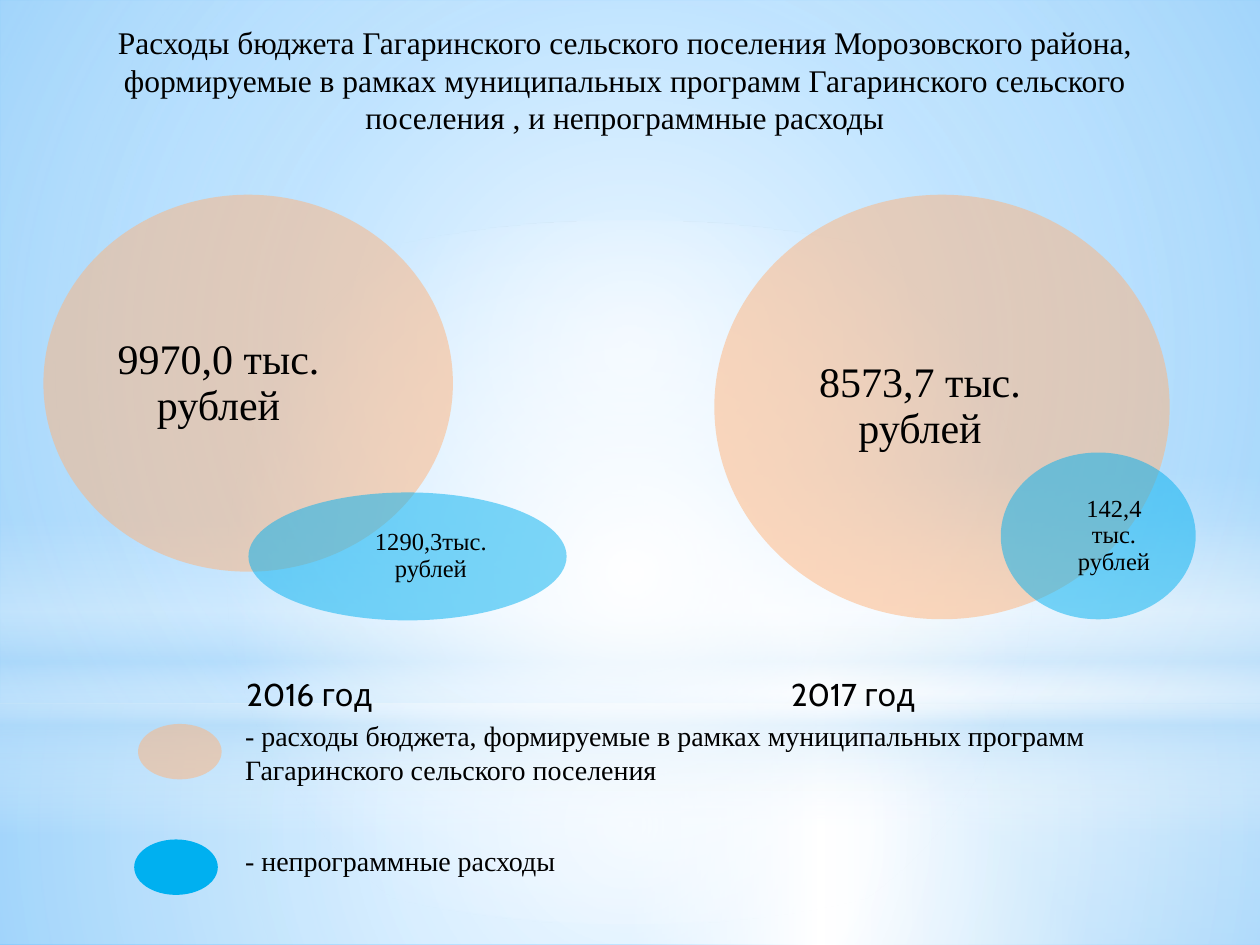
from lxml.etree import SubElement
from pptx import Presentation
from pptx.dml.color import RGBColor
from pptx.enum.shapes import MSO_SHAPE
from pptx.enum.text import MSO_ANCHOR, PP_ALIGN
from pptx.oxml.ns import qn
from pptx.util import Pt

BLACK = RGBColor(0x00, 0x00, 0x00)
WHITE = RGBColor(0xFF, 0xFF, 0xFF)
PEACH = RGBColor(0xFF, 0xB3, 0x7A)
CYAN = RGBColor(0x00, 0xB0, 0xF0)
PALE_BLUE = RGBColor(0xB4, 0xDC, 0xFA)
SKY = RGBColor(0x9E, 0xD5, 0xFF)
DEEP_SKY = RGBColor(0x5B, 0xB9, 0xFF)

SERIF = "Times New Roman"
SANS = "Cabin"
CENTRE = (50, 50, 50, 50)
INSETS = (7.2, 3.6, 7.2, 3.6)

# Backdrop layers: preset, box, stops (position, colour, opacity), path, focus
BACKDROP = [
    (MSO_SHAPE.RECTANGLE, (0, 402, 720, 138),
     [(0, WHITE, 91), (37, WHITE, 76), (100, PALE_BLUE, 79)], "circle", CENTRE),
    (MSO_SHAPE.RECTANGLE, (0, 0, 720, 402),
     [(0, WHITE, 89), (48, WHITE, 62), (100, PALE_BLUE, 79)], "circle", CENTRE),
    (MSO_SHAPE.RECTANGLE, (0, 297, 720, 180),
     [(0, WHITE, 0), (29, WHITE, 30), (45, PALE_BLUE, 40), (55, WHITE, 26),
      (65, PALE_BLUE, 60), (100, WHITE, 0)], None, None),
    (MSO_SHAPE.OVAL, (0, 126, 720, 402),
     [(0, WHITE, 100), (56, WHITE, 0)], "circle", CENTRE),
]

# Amounts: oval box, colour, label box, label, size
AMOUNTS = [
    ((408.2, 111.3, 260.2, 242.6), PEACH, (432.7, 132.9, 186, 199.4),
     "8573,7 тыс. рублей", 24),
    ((571.9, 258.6, 111.4, 95.3), CYAN, (607.2, 271.6, 58.8, 69.3),
     "142,4 тыс. рублей", 14),
    ((24.8, 111.3, 234, 215.4), PEACH, (57.6, 136.8, 134.6, 164.9),
     "9970,0 тыс. рублей", 24),
    ((142, 281.4, 181.8, 73.1), CYAN, (193.7, 290.2, 105.1, 55.4),
     "1290,3тыс. рублей", 14),
]

# Legend: key box, colour, opacity, text box, text
LEGEND = [
    ((78.9, 413.7, 47.8, 31.7), PEACH, 50, (133, 407, 556, 46),
     "- расходы бюджета, формируемые в рамках муниципальных программ "
     "Гагаринского сельского поселения"),
    ((76.7, 479.7, 47.8, 31.7), CYAN, 100, (133, 478.3, 487, 26.6),
     "- непрограммные расходы"),
]

YEARS = [
    ("2016 год", (84.2, 382.3, 185, 29), PP_ALIGN.CENTER),
    ("2017 год", (445, 382.3, 235.4, 29), PP_ALIGN.LEFT),
]


def points(box):
    return [Pt(value) for value in box]


def set_opacity(color_element, percent):
    if percent < 100:
        SubElement(color_element, qn("a:alpha"), val=str(percent * 1000))


def make_gradient(properties, stops, path=None, focus=None):
    """Replace the solid fill in properties by a gradient."""
    solid = properties.find(qn("a:solidFill"))
    gradient = SubElement(properties, qn("a:gradFill"), rotWithShape="1")
    stop_list = SubElement(gradient, qn("a:gsLst"))
    for position, color, opacity in stops:
        stop = SubElement(stop_list, qn("a:gs"), pos=str(position * 1000))
        set_opacity(SubElement(stop, qn("a:srgbClr"), val=str(color)), opacity)
    if path:
        path_element = SubElement(gradient, qn("a:path"), {"path": path})
        edges = {side: str(value * 1000) for side, value in zip("ltrb", focus)}
        SubElement(path_element, qn("a:fillToRect"), edges)
    else:
        SubElement(gradient, qn("a:lin"), ang="5400000", scaled="0")
    properties.replace(solid, gradient)


def add_shape(slide, preset, box, color, opacity=100):
    shape = slide.shapes.add_shape(preset, *points(box))
    shape.shadow.inherit = False
    shape.line.fill.background()
    shape.fill.solid()
    shape.fill.fore_color.rgb = color
    solid = shape.element.spPr.find(qn("a:solidFill"))
    set_opacity(solid[0], opacity)
    return shape


def write_text(shape, text, size=18, font=SERIF, align=PP_ALIGN.LEFT,
               anchor=MSO_ANCHOR.TOP, insets=INSETS, line_spacing=1.0):
    frame = shape.text_frame
    frame.word_wrap = True
    frame.vertical_anchor = anchor
    (frame.margin_left, frame.margin_top,
     frame.margin_right, frame.margin_bottom) = points(insets)
    paragraph = frame.paragraphs[0]
    paragraph.alignment = align
    paragraph.line_spacing = line_spacing
    run = paragraph.add_run()
    run.text = text
    run.font.size = Pt(size)
    run.font.name = font
    run.font.color.rgb = BLACK


def add_text(slide, box, text, **text_format):
    write_text(slide.shapes.add_textbox(*points(box)), text, **text_format)


def add_backdrop(slide):
    slide.background.fill.solid()
    slide.background.fill.fore_color.rgb = WHITE
    background = next(slide.element.iter(qn("p:bgPr")))
    make_gradient(background, [(0, SKY, 100), (60, WHITE, 100), (100, DEEP_SKY, 100)],
                  "rect", (100, 100, 0, 0))
    for preset, box, stops, path, focus in BACKDROP:
        layer = add_shape(slide, preset, box, WHITE)
        make_gradient(layer.element.spPr, stops, path, focus)


def add_title(slide, text):
    title = slide.shapes.title
    title.left, title.top, title.width, title.height = points((31, 9.4, 652.3, 72.7))
    write_text(title, text, align=PP_ALIGN.CENTER)
    # Bring the title in front of the backdrop
    slide.shapes.element.append(title.element)


def main():
    presentation = Presentation()
    presentation.slide_width, presentation.slide_height = Pt(720), Pt(540)
    slide = presentation.slides.add_slide(presentation.slide_layouts[5])

    add_backdrop(slide)
    add_title(slide, "Расходы бюджета Гагаринского сельского поселения Морозовского "
                     "района, формируемые в рамках муниципальных программ Гагаринского "
                     "сельского поселения , и непрограммные расходы")

    # Overlapping ovals with the amounts of each year
    for box, color, label_box, label, size in AMOUNTS:
        add_shape(slide, MSO_SHAPE.OVAL, box, color, opacity=50)
        add_text(slide, label_box, label, size=size, align=PP_ALIGN.CENTER,
                 anchor=MSO_ANCHOR.MIDDLE, insets=(0, 0, 0, 0), line_spacing=0.9)

    # Legend
    for box, color, opacity, text_box, text in LEGEND:
        add_shape(slide, MSO_SHAPE.OVAL, box, color, opacity)
        add_text(slide, text_box, text, size=16)

    # Years
    for text, box, align in YEARS:
        add_text(slide, box, text, font=SANS, align=align)

    presentation.save("out.pptx")


if __name__ == "__main__":
    main()
